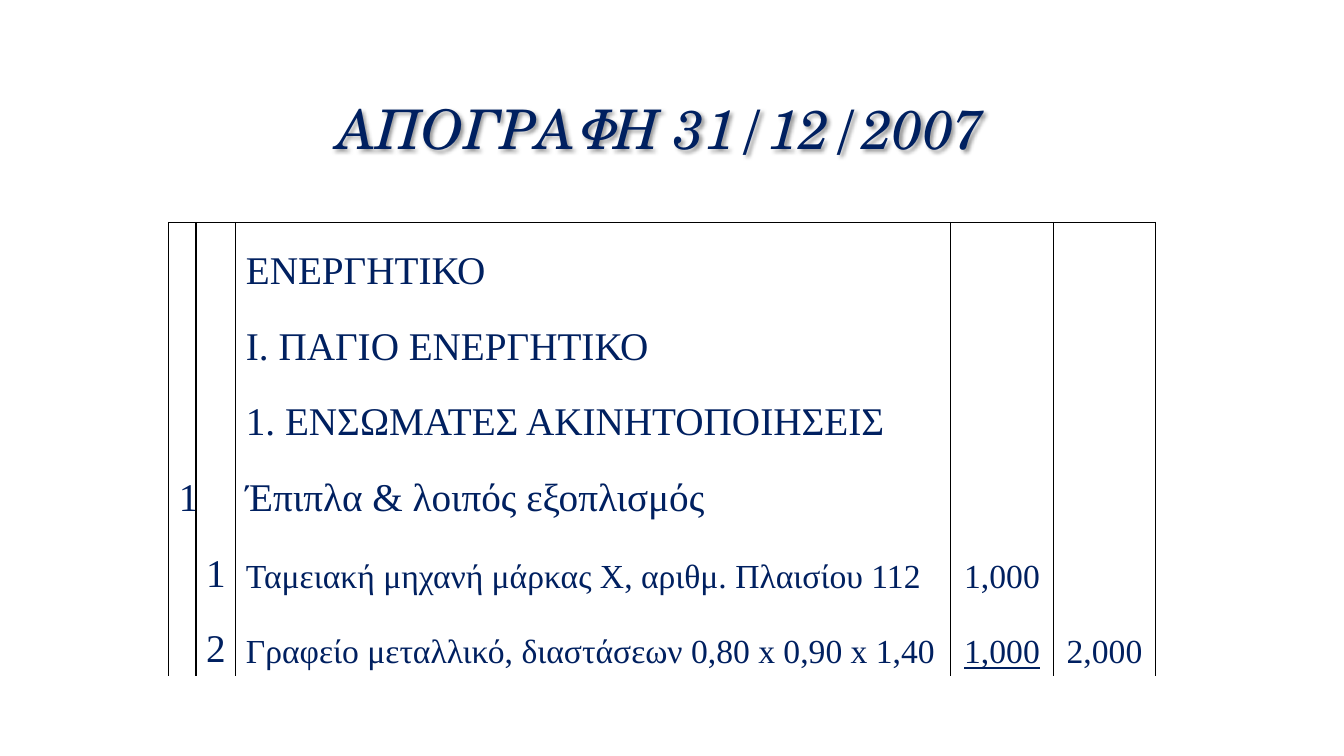
from lxml.etree import SubElement
from pptx import Presentation
from pptx.dml.color import RGBColor
from pptx.enum.text import MSO_ANCHOR, PP_ALIGN
from pptx.oxml import parse_xml
from pptx.oxml.ns import nsdecls, qn
from pptx.util import Pt

NAVY = RGBColor(0x00, 0x20, 0x60)
OUTLINE = RGBColor(0x40, 0x40, 0x40)
BLACK = RGBColor(0x00, 0x00, 0x00)

DESCRIPTION_COLUMN = 2
COLUMN_WIDTHS = [19.5, 28.5, 510.5, 73.5, 73]
ROW_HEIGHT = 54
INVENTORY = [
    ["", "", ("ΕΝΕΡΓΗΤΙΚΟ", 28), "", ""],
    ["", "", ("Ι. ΠΑΓΙΟ ΕΝΕΡΓΗΤΙΚΟ", 28), "", ""],
    ["", "", ("1. ΕΝΣΩΜΑΤΕΣ ΑΚΙΝΗΤΟΠΟΙΗΣΕΙΣ", 28), "", ""],
    [("1", 28), "", ("Έπιπλα & λοιπός εξοπλισμός", 28), "", ""],
    ["", ("1", 28), ("Ταμειακή μηχανή μάρκας Χ, αριθμ. Πλαισίου 112", 24),
     ("1,000", 24), ""],
    ["", ("2", 28), ("Γραφείο μεταλλικό, διαστάσεων 0,80 x 0,90 x 1,40", 24),
     ("1,000", 24, True), ("2,000", 24)],
]


class InventorySlide:
    """Holds the slide and its text style, and adds the title and the table."""

    title_font = "TeX Gyre Schola"
    body_font = "Times New Roman"
    color = NAVY

    def __init__(self, presentation):
        self.slide = presentation.slides.add_slide(presentation.slide_layouts[5])

    def style(self, paragraph, name, size, align):
        paragraph.alignment = align
        font = paragraph.font
        font.name = name
        font.size = Pt(size)
        font.color.rgb = self.color
        return font

    def add_title(self, text, left, top, width, height):
        title = self.slide.shapes.title
        title.left, title.top = Pt(left), Pt(top)
        title.width, title.height = Pt(width), Pt(height)
        title.text_frame.vertical_anchor = MSO_ANCHOR.MIDDLE
        heading = title.text_frame.paragraphs[0]
        heading.text = text
        heading.line_spacing = 0.9
        font = self.style(heading, self.title_font, 39, PP_ALIGN.CENTER)
        font.italic = True
        outline = parse_xml(
            f'<a:ln {nsdecls("a")} w="{Pt(0.75)}"><a:solidFill><a:srgbClr val="{OUTLINE}">'
            '<a:alpha val="10000"/></a:srgbClr></a:solidFill></a:ln>')
        heading.runs[0].font._element.insert(0, outline)
        title._element.spPr.append(parse_xml(
            f'<a:effectLst {nsdecls("a")}><a:outerShdw blurRad="{Pt(3)}" dist="{Pt(2)}" '
            f'dir="2700000"><a:srgbClr val="{BLACK}"><a:alpha val="40000"/></a:srgbClr>'
            '</a:outerShdw></a:effectLst>'))

    def add_table(self, rows, left, top):
        frame = self.slide.shapes.add_table(
            len(rows), len(COLUMN_WIDTHS), Pt(left), Pt(top),
            Pt(sum(COLUMN_WIDTHS)), Pt(ROW_HEIGHT * len(rows)))
        table = frame.table
        table.first_row = table.horz_banding = False
        for column, width in zip(table.columns, COLUMN_WIDTHS):
            column.width = Pt(width)
        for r, entries in enumerate(rows):
            table.rows[r].height = Pt(ROW_HEIGHT)
            for c, entry in enumerate(entries):
                cell = table.cell(r, c)
                self.add_borders(cell, "LRT" if r == 0 else "LR")
                cell.fill.background()
                if entry:
                    align = PP_ALIGN.LEFT if c == DESCRIPTION_COLUMN else PP_ALIGN.CENTER
                    self.fill_cell(cell, align, *entry)

    def fill_cell(self, cell, align, text, size, underline=False):
        cell.vertical_anchor = MSO_ANCHOR.BOTTOM
        paragraph = cell.text_frame.paragraphs[0]
        paragraph.text = text
        font = self.style(paragraph, self.body_font, size, align)
        font.underline = underline
        properties = paragraph._p.get_or_add_pPr()
        properties.set("marL", str(Pt(27)))
        properties.set("indent", str(Pt(-27)))

    def add_borders(self, cell, ruled_sides):
        properties = cell._tc.get_or_add_tcPr()
        for side in "LRTB":
            line = SubElement(properties, qn(f"a:ln{side}"), w=str(Pt(1)))
            if side in ruled_sides:
                fill = SubElement(line, qn("a:solidFill"))
                SubElement(fill, qn("a:srgbClr"), val=str(BLACK))
            else:
                SubElement(line, qn("a:noFill"))


def main():
    presentation = Presentation()
    presentation.slide_width, presentation.slide_height = Pt(960), Pt(540)
    inventory = InventorySlide(presentation)
    inventory.add_title("ΑΠΟΓΡΑΦΗ 31/12/2007", 120, 49, 704, 90)
    inventory.add_table(INVENTORY, 120.5, 159)
    presentation.save("out.pptx")


if __name__ == "__main__":
    main()
